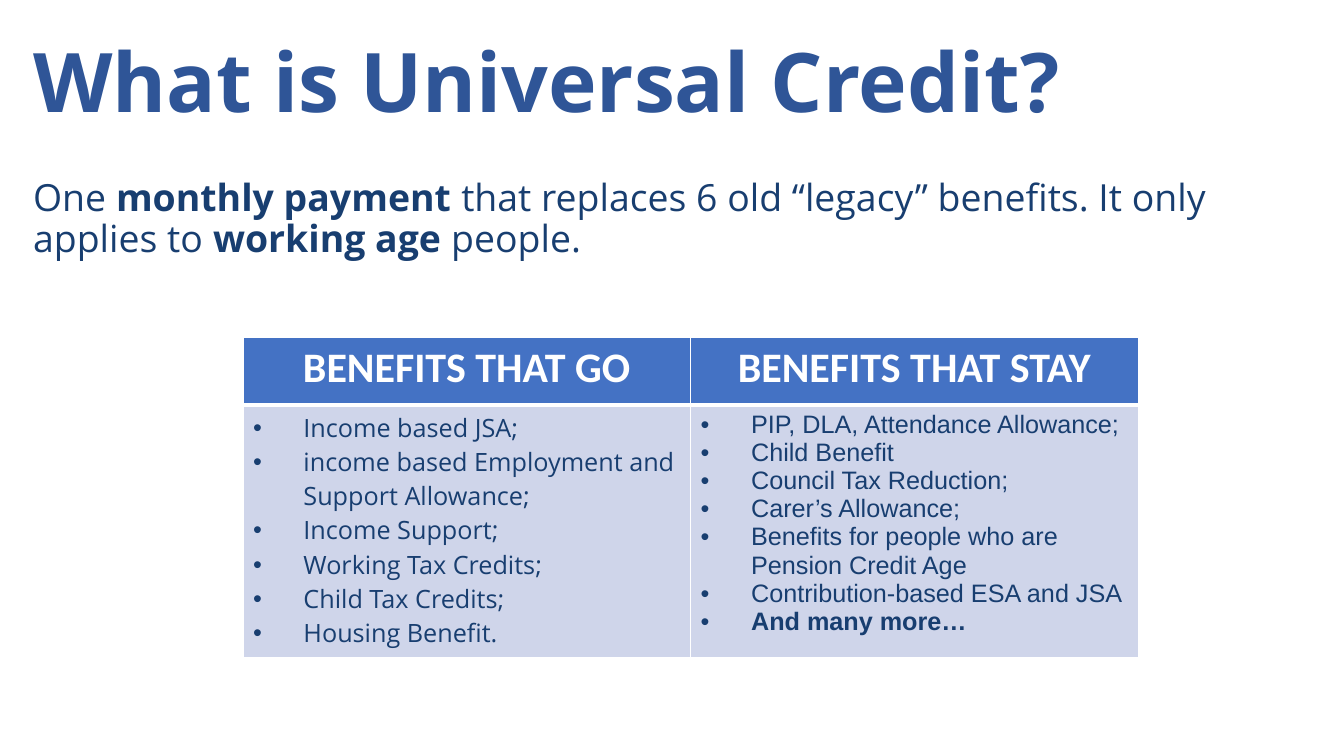
from lxml.etree import SubElement as Sub
from pptx import Presentation
from pptx.dml.color import RGBColor as Rgb
from pptx.enum.text import PP_ALIGN as Align
from pptx.oxml.ns import qn
from pptx.util import Inches, Pt

theme = {
    "title": ("Open Sans", 58.7, "2F5597"),
    "lead": ("Open Sans", 26.7, "183E70"),
    "head": ("Calibri", 30, "FFFFFF"),
    "go": ("Open Sans", 18, "183E70"),
    "stay": ("Arial", 18, "183E70"),
    "band": "4472C4",
    "cell": "CFD5EA",
    "rule": "FFFFFF",
}


def add_run(para, text, style, bold=False):
    face, size, color = theme[style]
    run = para.add_run()
    run.text = text
    run.font.name = face
    run.font.size = Pt(size)
    run.font.bold = bold
    run.font.color.rgb = Rgb.from_string(color)


def paint(cell, fill, base):
    props = cell._tc.get_or_add_tcPr()
    for side, width in (("L", 1), ("R", 1), ("T", 1), ("B", base)):
        if side == "T" and fill == theme["cell"]:
            width = 3
        line = Sub(props, qn(f"a:ln{side}"), w=str(Pt(width)))
        solid = Sub(line, qn("a:solidFill"))
        Sub(solid, qn("a:srgbClr"), val=theme["rule"])
    cell.fill.solid()
    cell.fill.fore_color.rgb = Rgb.from_string(fill)


deck = Presentation()
deck.slide_width = Inches(13.33)
deck.slide_height = Inches(7.5)
slide = deck.slides.add_slide(deck.slide_layouts[6])

texts = [
    ("title", (0.23, 0.31, 11.07, 3.31), 0.1, [("What is Universal Credit?", True)]),
    ("lead", (0.23, 1.73, 12.67, 1.45), 0.05, [
        ("One ", False),
        ("monthly payment ", True),
        ("that replaces 6 old “legacy” benefits. It only applies to ", False),
        ("working age ", True),
        ("people.", False),
    ]),
]
for style, place, inset, runs in texts:
    box = slide.shapes.add_textbox(*[Inches(n) for n in place])
    frame = box.text_frame
    frame.word_wrap = True
    frame.margin_left = frame.margin_right = Inches(0.1)
    frame.margin_top = frame.margin_bottom = Inches(inset)
    para = frame.paragraphs[0]
    para.line_spacing = 0.9
    for text, bold in runs:
        add_run(para, text, style, bold)

groups = [
    ("go", "BENEFITS THAT GO", [
        ("Income based JSA;", False),
        ("income based Employment and Support Allowance;", False),
        ("Income Support;", False),
        ("Working Tax Credits;", False),
        ("Child Tax Credits;", False),
        ("Housing Benefit.", False),
    ]),
    ("stay", "BENEFITS THAT STAY", [
        ("PIP, DLA, Attendance Allowance;", False),
        ("Child Benefit", False),
        ("Council Tax Reduction;", False),
        ("Carer’s Allowance;", False),
        ("Benefits for people who are Pension Credit Age", False),
        ("Contribution-based ESA and JSA", False),
        ("And many more…", True),
    ]),
]
grid = slide.shapes.add_table(
    2, 2, Inches(2.41), Inches(3.35), Inches(8.88), Inches(3.17)
).table
grid.rows[0].height = Inches(0.67)
grid.rows[1].height = Inches(2.5)

for col, (style, head, items) in enumerate(groups):
    grid.columns[col].width = Inches(4.44)
    top, body = grid.cell(0, col), grid.cell(1, col)
    paint(top, theme["band"], 3)
    paint(body, theme["cell"], 1)
    para = top.text_frame.paragraphs[0]
    para.alignment = Align.CENTER
    add_run(para, head, "head", True)
    frame = body.text_frame
    for row, (text, bold) in enumerate(items):
        para = frame.add_paragraph() if row else frame.paragraphs[0]
        props = para._p.get_or_add_pPr()
        props.set("marL", str(Inches(0.5)))
        props.set("indent", str(Inches(-0.5)))
        Sub(props, qn("a:buFont"), typeface="Arial")
        Sub(props, qn("a:buChar"), char="•")
        add_run(para, text, style, bold)

deck.save("out.pptx")
